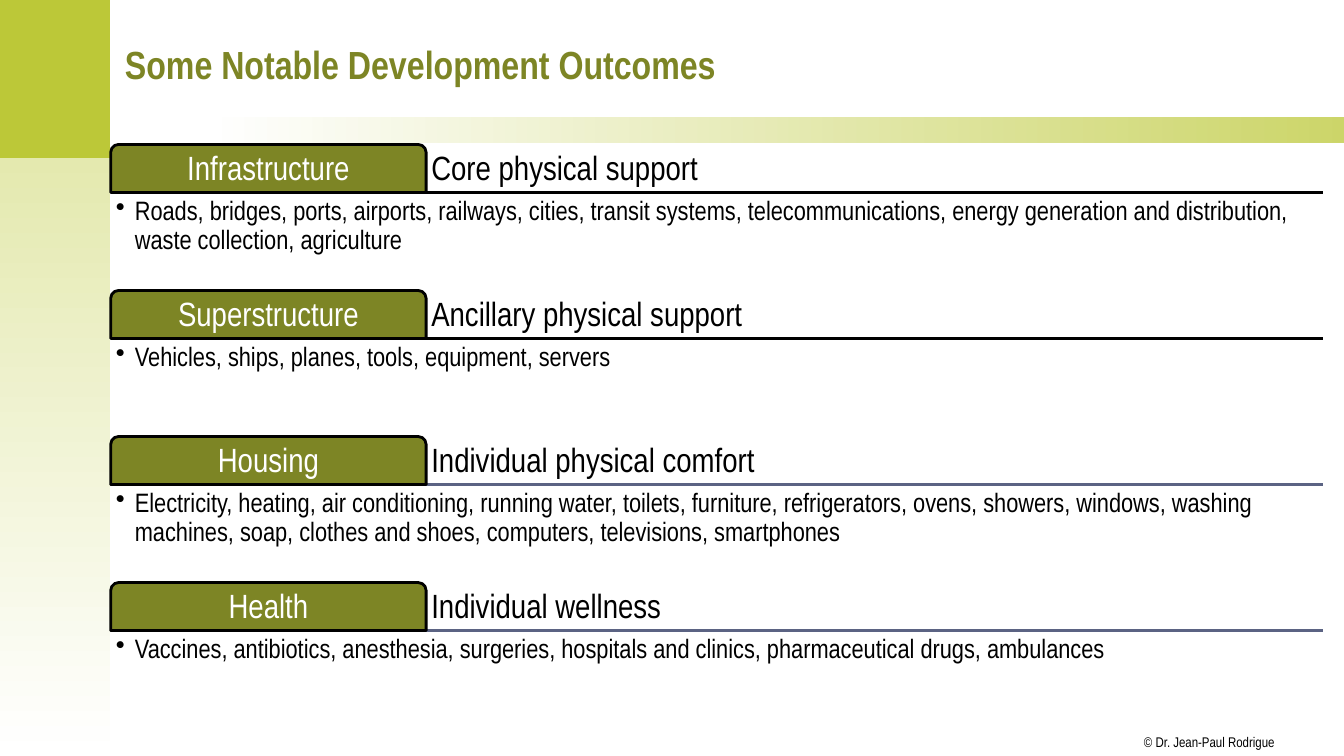
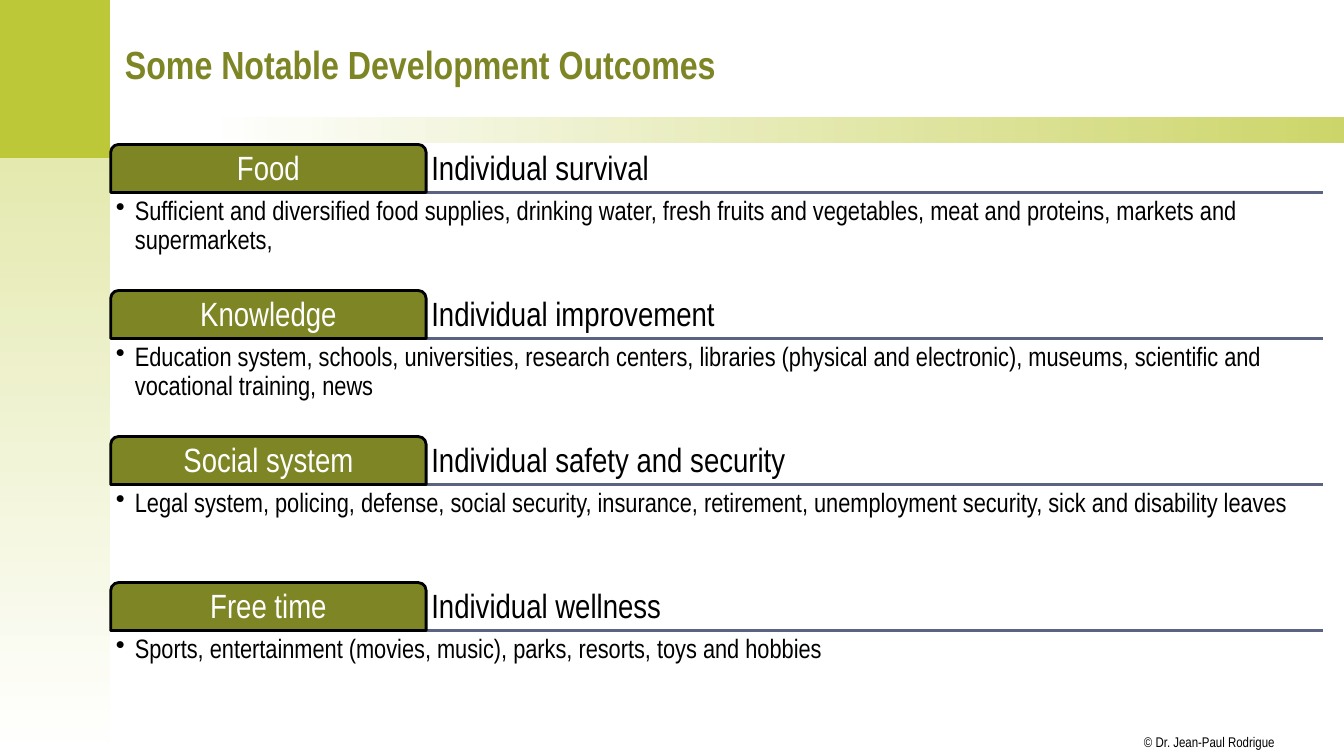
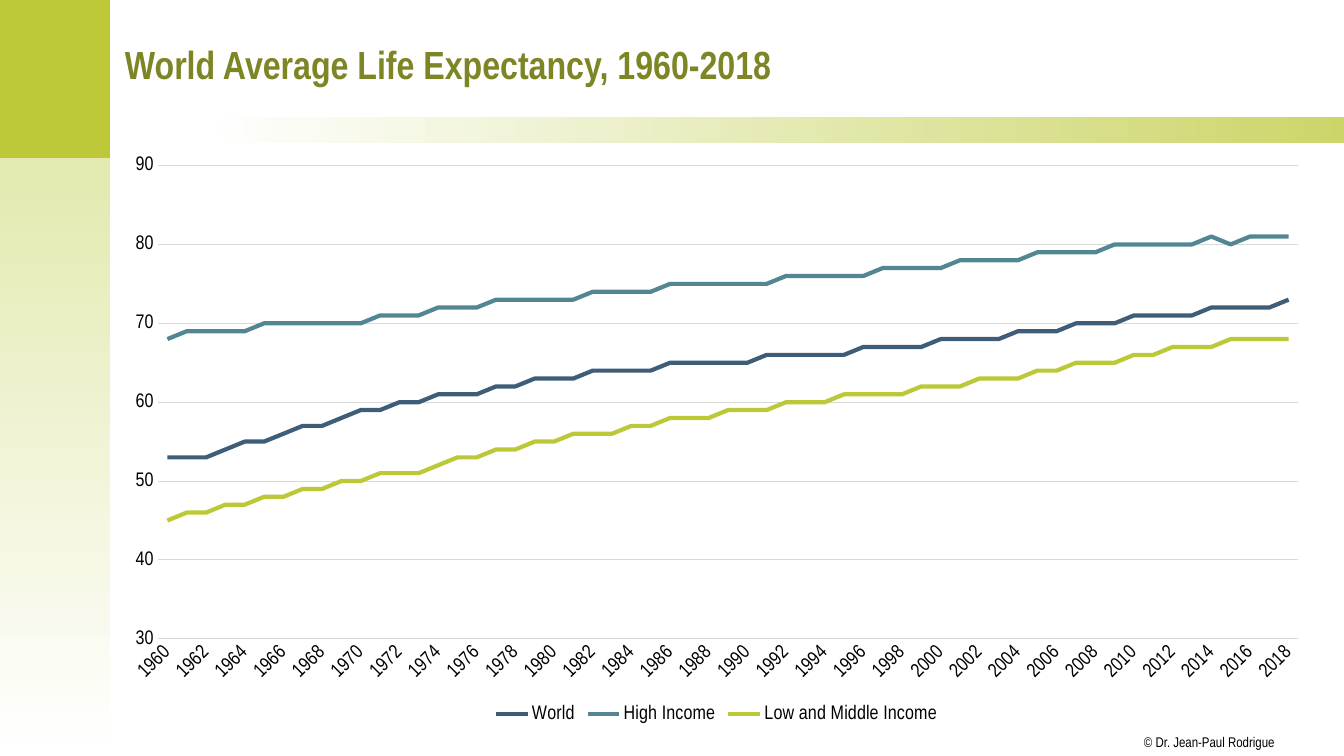
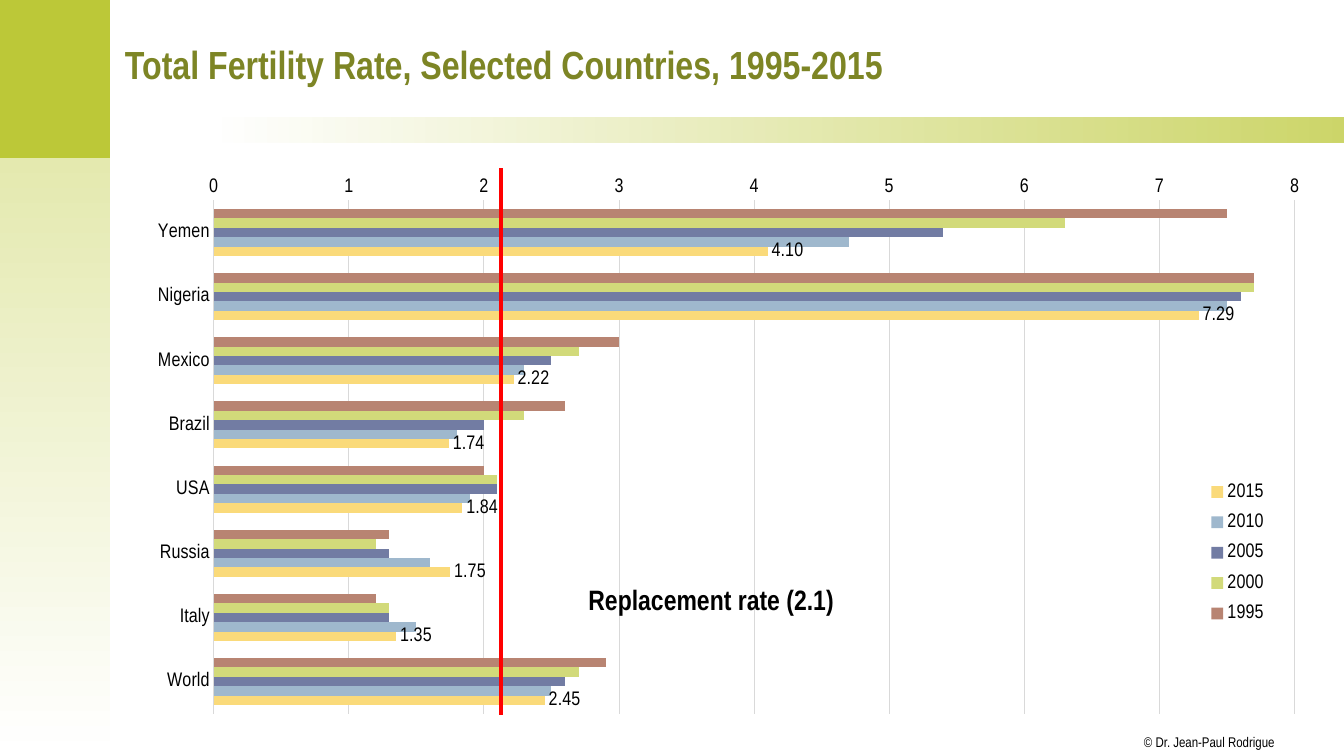
from lxml import etree
from pptx import Presentation
from pptx.chart.data import CategoryChartData
from pptx.dml.color import RGBColor
from pptx.enum.chart import XL_CHART_TYPE, XL_LABEL_POSITION, XL_LEGEND_POSITION, XL_TICK_MARK
from pptx.enum.shapes import MSO_CONNECTOR, MSO_SHAPE
from pptx.enum.text import MSO_ANCHOR, PP_ALIGN
from pptx.oxml.ns import qn
from pptx.util import Cm, Pt

LINE_CHART = XL_CHART_TYPE.LINE
BAR_CHART = XL_CHART_TYPE.BAR_CLUSTERED
OUTSIDE_END = XL_LABEL_POSITION.OUTSIDE_END
LEGEND_BOTTOM = XL_LEGEND_POSITION.BOTTOM
NO_TICK = XL_TICK_MARK.NONE
STRAIGHT = MSO_CONNECTOR.STRAIGHT
RECTANGLE = MSO_SHAPE.RECTANGLE
TAB_SHAPE = MSO_SHAPE.ROUND_2_SAME_RECTANGLE
TOP, MIDDLE, BOTTOM = MSO_ANCHOR.TOP, MSO_ANCHOR.MIDDLE, MSO_ANCHOR.BOTTOM
LEFT, CENTER = PP_ALIGN.LEFT, PP_ALIGN.CENTER

FONT = "Arial Narrow"
COLORS = {
    "lime": "BCC838", "pale": "E4E9AF", "olive": "7D8525", "white": "FFFFFF",
    "black": "000000", "slate": "5B6383", "grid": "D9D9D9", "red": "FF0000",
    "navy": "3E5D78", "teal": "528693", "clay": "B88472", "moss": "D2DA7A",
    "violet": "727CA3", "sky": "9FB8CD", "sand": "FADA7A",
}
CONTENT_BOX = (2.79, 3.64, 30.54, 14.7)
ROW_PITCH, TAB_WIDTH, TAB_HEIGHT, DETAIL_HEIGHT = 3.68, 7.95, 1.21, 2.41
INSET = 0.13

PHYSICAL_ROWS = [
    ("Infrastructure", "Core physical support", "black",
     "Roads, bridges, ports, airports, railways, cities, transit systems, telecommunications, "
     "energy generation and distribution, waste collection, agriculture"),
    ("Superstructure", "Ancillary physical support", "black",
     "Vehicles, ships, planes, tools, equipment, servers"),
    ("Housing", "Individual physical comfort", "slate",
     "Electricity, heating, air conditioning, running water, toilets, furniture, refrigerators, "
     "ovens, showers, windows, washing machines, soap, clothes and shoes, computers, "
     "televisions, smartphones"),
    ("Health", "Individual wellness", "slate",
     "Vaccines, antibiotics, anesthesia, surgeries, hospitals and clinics, "
     "pharmaceutical drugs, ambulances"),
]
SOCIAL_ROWS = [
    ("Food", "Individual survival", "slate",
     "Sufficient and diversified food supplies, drinking water, fresh fruits and vegetables, "
     "meat and proteins, markets and supermarkets,"),
    ("Knowledge", "Individual improvement", "slate",
     "Education system, schools, universities, research centers, libraries (physical and "
     "electronic), museums, scientific and vocational training, news"),
    ("Social system", "Individual safety and security", "slate",
     "Legal system, policing, defense, social security, insurance, retirement, "
     "unemployment security, sick and disability leaves"),
    ("Free time", "Individual wellness", "slate",
     "Sports, entertainment (movies, music), parks, resorts, toys and hobbies"),
]
YEARS = [str(year) for year in range(1960, 2019)]
LIFE_EXPECTANCY = [
    ("World", "navy",
     [53, 53, 53, 54, 55, 55, 56, 57, 57, 58, 59, 59, 60, 60, 61, 61, 61, 62, 62, 63,
      63, 63, 64, 64, 64, 64, 65, 65, 65, 65, 65, 66, 66, 66, 66, 66, 67, 67, 67, 67,
      68, 68, 68, 68, 69, 69, 69, 70, 70, 70, 71, 71, 71, 71, 72, 72, 72, 72, 73]),
    ("High Income", "teal",
     [68, 69, 69, 69, 69, 70, 70, 70, 70, 70, 70, 71, 71, 71, 72, 72, 72, 73, 73, 73,
      73, 73, 74, 74, 74, 74, 75, 75, 75, 75, 75, 75, 76, 76, 76, 76, 76, 77, 77, 77,
      77, 78, 78, 78, 78, 79, 79, 79, 79, 80, 80, 80, 80, 80, 81, 80, 81, 81, 81]),
    ("Low and Middle Income", "lime",
     [45, 46, 46, 47, 47, 48, 48, 49, 49, 50, 50, 51, 51, 51, 52, 53, 53, 54, 54, 55,
      55, 56, 56, 56, 57, 57, 58, 58, 58, 59, 59, 59, 60, 60, 60, 61, 61, 61, 61, 62,
      62, 62, 63, 63, 63, 64, 64, 65, 65, 65, 66, 66, 67, 67, 67, 68, 68, 68, 68]),
]
COUNTRIES = ["Yemen", "Nigeria", "Mexico", "Brazil", "USA", "Russia", "Italy", "World"]
FERTILITY = [
    ("1995", "clay", [7.5, 7.7, 3, 2.6, 2, 1.3, 1.2, 2.9]),
    ("2000", "moss", [6.3, 7.7, 2.7, 2.3, 2.1, 1.2, 1.3, 2.7]),
    ("2005", "violet", [5.4, 7.6, 2.5, 2, 2.1, 1.3, 1.3, 2.6]),
    ("2010", "sky", [4.7, 7.5, 2.3, 1.8, 1.9, 1.6, 1.5, 2.5]),
    ("2015", "sand", [4.1, 7.29, 2.22, 1.74, 1.84, 1.75, 1.35, 2.45]),
]


def rgb(name):
    return RGBColor.from_string(COLORS[name])


def style_font(font, size, color="black", bold=False):
    font.name = FONT
    font.size = Pt(size)
    font.bold = bold
    font.color.rgb = rgb(color)


def write(shape, text, size, color="black", bold=False, anchor=TOP, align=LEFT,
          inset=INSET, wrap=True, spacing=None):
    frame = shape.text_frame
    frame.text = text
    frame.word_wrap = wrap
    frame.vertical_anchor = anchor
    frame.margin_left = frame.margin_right = Cm(inset)
    frame.margin_top = frame.margin_bottom = Cm(inset)
    para = frame.paragraphs[0]
    para.alignment = align
    para.line_spacing = spacing
    for span in para.runs:
        style_font(span.font, size, color, bold)
    return para


def add_text(page, box, text, size, **style):
    return write(page.shapes.add_textbox(*map(Cm, box)), text, size, **style)


def add_block(page, box, kind=RECTANGLE):
    block = page.shapes.add_shape(kind, *map(Cm, box))
    block.shadow.inherit = False
    block.line.fill.background()
    return block


def fill_solid(block, color):
    block.fill.solid()
    block.fill.fore_color.rgb = rgb(color)


def fill_gradient(block, colors, angle, opacity=100):
    block.fill.gradient()
    block.fill.gradient_angle = angle
    for stop, color in zip(block.fill.gradient_stops, colors):
        stop.color.rgb = rgb(color)
    for color_node in block._element.spPr.iter(qn("a:srgbClr")):
        etree.SubElement(color_node, qn("a:alpha")).set("val", str(opacity * 1000))


def add_line(page, start, end, color, width):
    line = page.shapes.add_connector(STRAIGHT, *map(Cm, start + end))
    line.line.color.rgb = rgb(color)
    line.line.width = Pt(width)
    etree.SubElement(line._element.spPr, qn("a:effectLst"))


def add_page(deck, title):
    page = deck.slides.add_slide(deck.slide_layouts[6])
    fill_solid(add_block(page, (-0.05, -0.03, 2.82, 4.02)), "lime")
    fill_gradient(add_block(page, (-0.05, 3.99, 2.82, 15.06)), ("pale", "white"), 270)
    fill_gradient(add_block(page, (5.31, 2.95, 28.56, 0.64)), ("white", "lime"), 0, 75)
    add_text(page, (28.83, 18.49, 3.33, 0.43), "© Dr. Jean-Paul Rodrigue", 10,
             inset=0, wrap=False)
    add_text(page, (2.9, 0.28, 30.4, 2.64), title, 28, color="olive", bold=True,
             anchor=MIDDLE, inset=0.25)
    return page


def add_bullet(para):
    properties = para._p.get_or_add_pPr()
    properties.set("marL", str(Cm(0.48)))
    properties.set("indent", str(Cm(-0.48)))
    etree.SubElement(properties, qn("a:buChar")).set("char", "•")


def add_row(page, box, label, heading, rule_color, detail):
    left, top, width = box
    rule_top = top + TAB_HEIGHT
    add_line(page, (left, rule_top), (left + width, rule_top), rule_color, 2)
    add_text(page, (left + TAB_WIDTH, top, width - TAB_WIDTH, TAB_HEIGHT), heading, 24,
             anchor=BOTTOM, spacing=0.9)
    tab = add_block(page, (left, top, TAB_WIDTH, TAB_HEIGHT), TAB_SHAPE)
    fill_solid(tab, "olive")
    tab.line.color.rgb = rgb("black")
    tab.line.width = Pt(2)
    write(tab, label, 24, color="white", anchor=MIDDLE, align=CENTER, spacing=0.9)
    add_bullet(add_text(page, (left, rule_top, width, DETAIL_HEIGHT), detail, 19, spacing=0.9))


def add_rows(page, box, rows):
    left, top, width, _ = box
    for index, row in enumerate(rows):
        add_row(page, (left, top + index * ROW_PITCH, width), *row)


def set_layout(parent, position, box, inner=False):
    for old in parent.findall(qn("c:layout")):
        parent.remove(old)
    layout = etree.Element(qn("c:layout"))
    manual = etree.SubElement(layout, qn("c:manualLayout"))
    settings = [("layoutTarget", "inner")] if inner else []
    settings += [("xMode", "edge"), ("yMode", "edge"), *zip("xywh", box)]
    for tag, value in settings:
        etree.SubElement(manual, qn(f"c:{tag}")).set("val", str(value))
    parent.insert(position, layout)


def add_chart(page, box, kind, categories, series_rows, low, high, step):
    data = CategoryChartData()
    data.categories = categories
    for name, _, values in series_rows:
        data.add_series(name, values)
    chart = page.shapes.add_chart(kind, *map(Cm, box), data).chart
    chart.has_title = False
    style_font(chart.font, 14)
    chart.plots[0].vary_by_categories = False
    for axis in (chart.category_axis, chart.value_axis):
        axis.major_tick_mark = axis.minor_tick_mark = NO_TICK
        style_font(axis.tick_labels.font, 14)
    scale = chart.value_axis
    scale.minimum_scale, scale.maximum_scale, scale.major_unit = low, high, step
    scale.tick_labels.number_format = "0"
    scale.tick_labels.number_format_is_linked = False
    scale.format.line.fill.background()
    scale.has_major_gridlines = True
    for line in (scale.major_gridlines.format.line, chart.category_axis.format.line):
        line.color.rgb = rgb("grid")
        line.width = Pt(0.75)
    chart.has_legend = True
    chart.legend.position = LEGEND_BOTTOM
    chart.legend.include_in_layout = False
    style_font(chart.legend.font, 14)
    return chart


def add_life_chart(page, box):
    chart = add_chart(page, box, LINE_CHART, YEARS, LIFE_EXPECTANCY, 30, 90, 10)
    labels = chart.category_axis._element.find(qn("c:txPr"))
    labels.find(qn("a:bodyPr")).set("rot", "-2700000")
    for series, (_, color, _) in zip(chart.series, LIFE_EXPECTANCY):
        series.smooth = False
        series.format.line.color.rgb = rgb(color)
        series.format.line.width = Pt(3)


def add_fertility_chart(page, box):
    chart = add_chart(page, box, BAR_CHART, COUNTRIES, FERTILITY, 0, 8, 1)
    chart.category_axis.reverse_order = True
    chart.plots[0].gap_width = 182
    for series, (_, color, _) in zip(chart.series, FERTILITY):
        fill_solid(series.format, color)
    labels = chart.series[-1].data_labels
    labels.show_value = True
    labels.number_format = "#,##0.00"
    labels.number_format_is_linked = False
    labels.position = OUTSIDE_END
    style_font(labels.font, 14)
    plot_area = chart._chartSpace.find(f"{qn('c:chart')}/{qn('c:plotArea')}")
    set_layout(plot_area, 0, (0.085, 0.096, 0.892, 0.88), inner=True)
    set_layout(chart.legend._element, 1, (0.9, 0.56, 0.06, 0.28))
    left, top, _, height = box
    mark = left + 9.83
    add_line(page, (mark, top + 0.6), (mark, top + height - 0.33), "red", 3)
    add_text(page, (left + 11.79, top + 10.79, 6.76, 1.12), "Replacement rate (2.1)", 20,
             bold=True, inset=0.25, wrap=False)


def main():
    deck = Presentation()
    deck.slide_width, deck.slide_height = Cm(33.87), Cm(19.05)
    for rows in (PHYSICAL_ROWS, SOCIAL_ROWS):
        add_rows(add_page(deck, "Some Notable Development Outcomes"), CONTENT_BOX, rows)
    add_life_chart(add_page(deck, "World Average Life Expectancy, 1960-2018"), CONTENT_BOX)
    add_fertility_chart(
        add_page(deck, "Total Fertility Rate, Selected Countries, 1995-2015"), CONTENT_BOX)
    deck.save("out.pptx")


if __name__ == "__main__":
    main()
